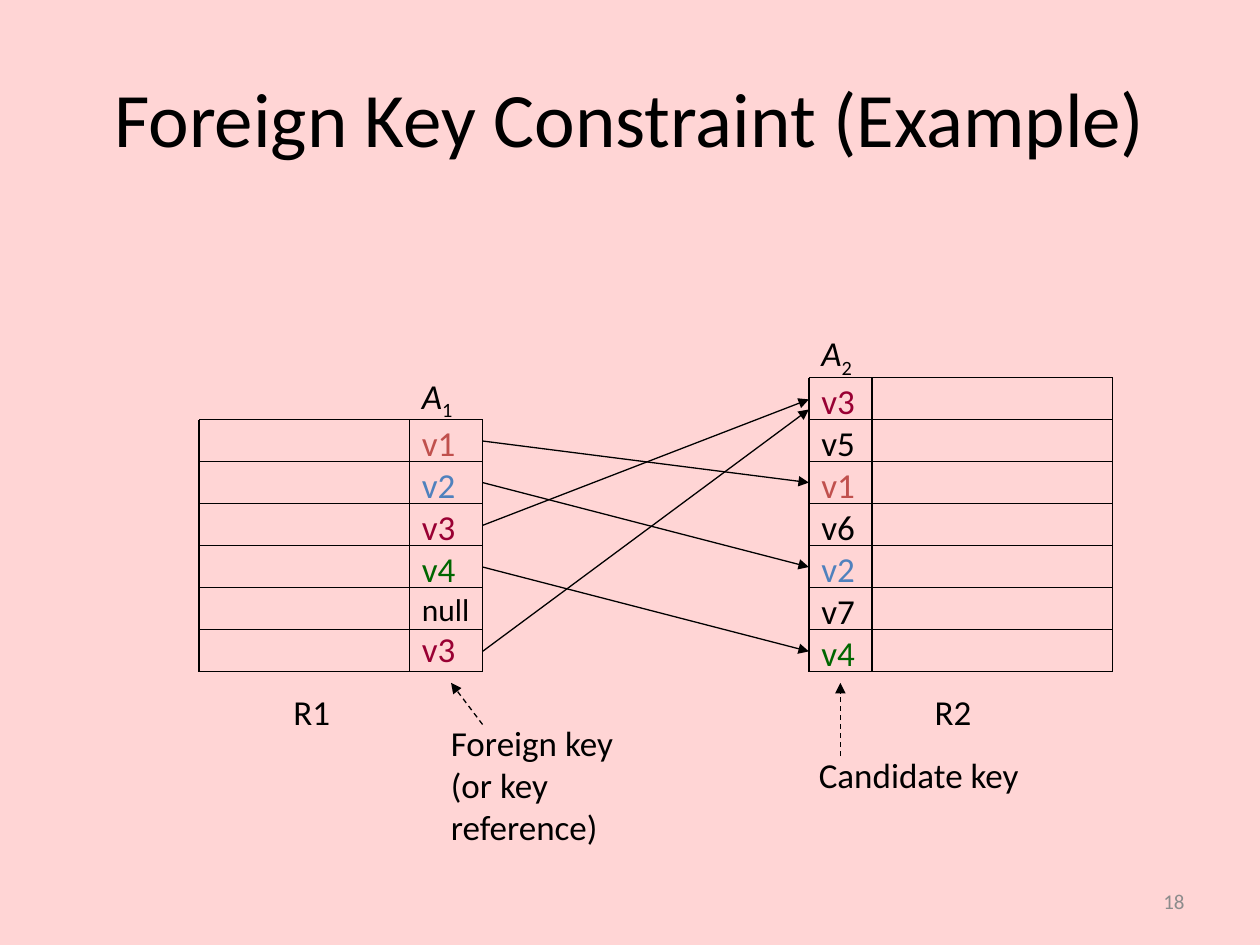
from lxml import etree
from pptx import Presentation
from pptx.dml.color import RGBColor
from pptx.enum import dml, shapes, text
from pptx.oxml import ns
from pptx.util import Inches, Pt

BLACK, RED, BLUE = "000000", "C0504D", "4F81BD"
CRIMSON, GREEN, GRAY = "990033", "006600", "8C8C8C"
VALUE_COLORS = {"v1": RED, "v2": BLUE, "v3": CRIMSON, "v4": GREEN}
ROW = 1 / 3
BOTTOM = 5.33


def color(hex_string):
    return RGBColor.from_string(hex_string)


def add_span(para, words, size=20, fill=BLACK, italic=False, baseline=None):
    span = para.add_run()
    span.text = words
    span.font.name = "Calibri"
    span.font.size = Pt(size)
    span.font.italic = italic
    span.font.color.rgb = color(fill)
    if baseline:
        span.font._element.set("baseline", str(baseline))


def add_text(page, left, top, width, height, paragraphs, align=None,
             anchor=text.MSO_ANCHOR.TOP, wrap=False, grow=True):
    """Each paragraph is a list of spans; each span is a dict for add_span."""
    box = page.shapes.add_textbox(Inches(left), Inches(top), Inches(width), Inches(height))
    frame = box.text_frame
    frame.word_wrap = wrap
    frame.vertical_anchor = anchor
    if grow:
        frame.auto_size = text.MSO_AUTO_SIZE.SHAPE_TO_FIT_TEXT
    for index, spans in enumerate(paragraphs):
        para = frame.add_paragraph() if index else frame.paragraphs[0]
        para.alignment = align
        for span in spans:
            add_span(para, **span)
    return box


def add_line(page, start, end, arrow=False, dashed=False):
    line = page.shapes.add_connector(shapes.MSO_CONNECTOR.STRAIGHT,
                                     *map(Inches, start + end))
    line.line.color.rgb = color(BLACK)
    line.line.width = Pt(0.75)
    if dashed:
        line.line.dash_style = dml.MSO_LINE.DASH
    if arrow:
        etree.SubElement(line.line._get_or_add_ln(), ns.qn("a:tailEnd"), type="triangle")
    etree.SubElement(line._element.spPr, ns.qn("a:effectLst"))


def add_grid(page, rows, columns, row_spans):
    """Draw the rules of a relation; row_spans are the pieces of each row rule."""
    top = BOTTOM - rows * ROW
    for x in columns:
        add_line(page, (x, top), (x, BOTTOM))
    for index in range(rows + 1):
        y = top + index * ROW
        for start, end in row_spans:
            add_line(page, (start, y), (end, y))


def add_key_column(page, left, top, width, height, subscript, values):
    heading = [dict(words="A", italic=True), dict(words=subscript, baseline=-25000)]
    cells = [[dict(words=value, size=18 if value == "null" else 20,
                   fill=VALUE_COLORS.get(value, BLACK))] for value in values]
    add_text(page, left, top, width, height, [heading] + cells)


def add_label(page, left, top, width, words):
    add_text(page, left, top, width, 0.43, [[dict(words=words)]])


def main():
    deck = Presentation()
    deck.slide_width, deck.slide_height = Inches(10), Inches(7.5)
    page = deck.slides.add_slide(deck.slide_layouts[6])
    page.background.fill.solid()
    page.background.fill.fore_color.rgb = color("FFD5D5")

    middle = text.MSO_ANCHOR.MIDDLE
    add_text(page, 7.17, 6.95, 2.33, 0.4, [[dict(words="18", size=12, fill=GRAY)]],
             text.PP_ALIGN.RIGHT, middle, wrap=True, grow=False)
    add_text(page, 0.5, 0.3, 9, 1.25,
             [[dict(words="Foreign Key Constraint (Example)", size=44)]],
             text.PP_ALIGN.CENTER, middle, wrap=True, grow=False)

    foreign = ["v1", "v2", "v3", "v4", "null", "v3"]
    candidate = ["v3", "v5", "v1", "v6", "v2", "v7", "v4"]
    add_key_column(page, 6.42, 2.58, 0.48, 2.77, "2", candidate)
    add_key_column(page, 3.25, 2.92, 0.59, 2.4, "1", foreign)
    add_grid(page, len(foreign), [1.58, 3.25, 3.83], [(3.42, 1.58), (3.42, 3.83)])
    add_grid(page, len(candidate), [6.42, 6.92, 8.83], [(6.42, 8.83)])

    for start, end in [(3.5, 3.83), (3.83, 4.5), (4.17, 3.17), (5.17, 3.25), (4.5, 5.17)]:
        add_line(page, (3.83, start), (6.42, end), arrow=True)

    add_label(page, 2.23, 5.43, 0.53, "R1")
    add_label(page, 7.32, 5.43, 0.53, "R2")
    note = add_text(page, 3.48, 5.68, 2.19, 0.77,
                    [[dict(words="Foreign key")], [dict(words="(or key reference)")]],
                    wrap=True)
    note.text_frame.margin_right = Inches(0.3)
    add_label(page, 6.4, 5.93, 1.8, "Candidate key")
    add_line(page, (3.83, 5.75), (3.58, 5.42), arrow=True, dashed=True)
    add_line(page, (6.67, 6), (6.67, 5.42), arrow=True, dashed=True)

    deck.save("out.pptx")


if __name__ == "__main__":
    main()
